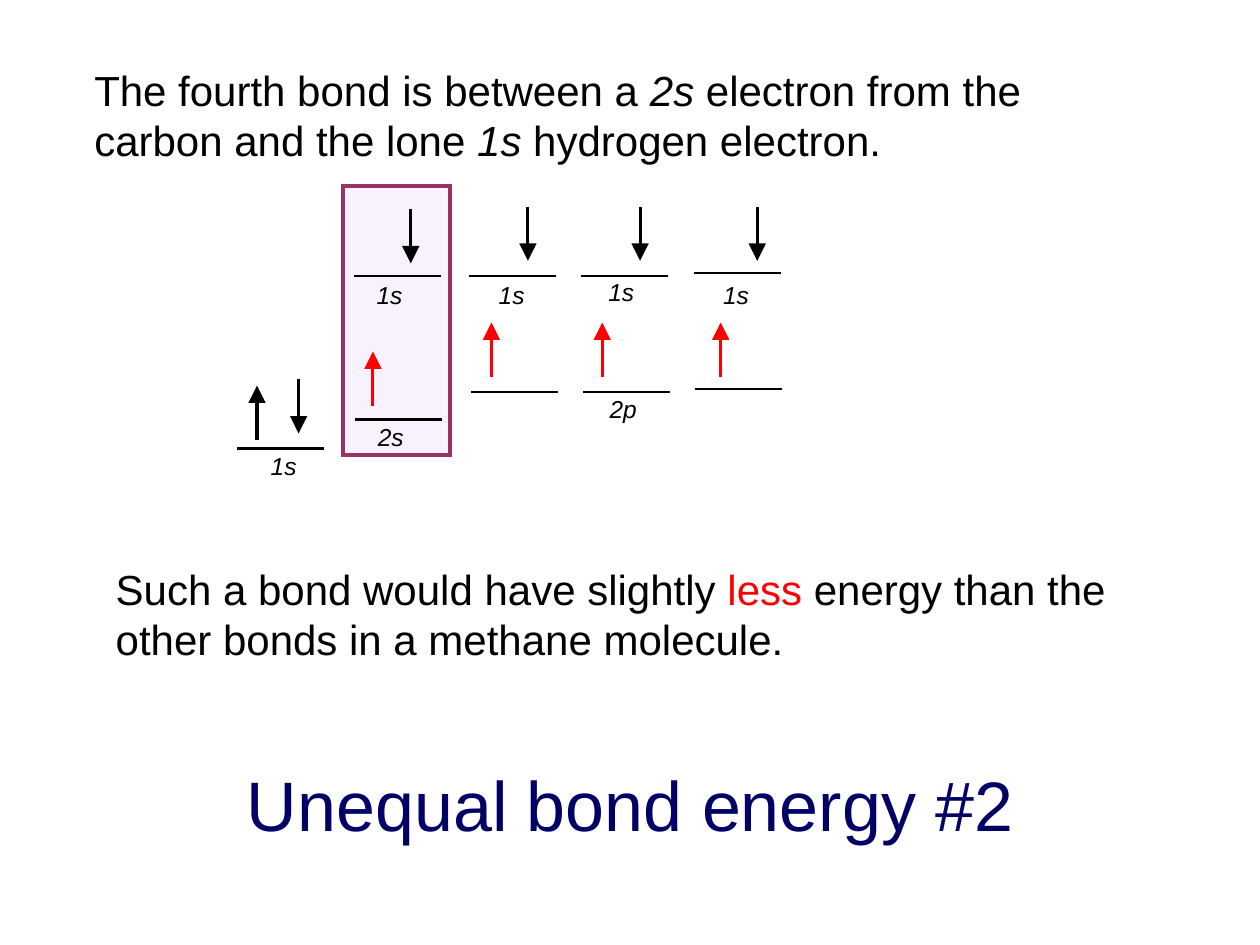
"""Build the slide on the unequal energy of the fourth bond in methane."""
from lxml import etree
from pptx import Presentation
from pptx.dml.color import RGBColor
from pptx.enum.shapes import MSO_CONNECTOR, MSO_SHAPE
from pptx.enum.text import MSO_ANCHOR, PP_ALIGN
from pptx.oxml.ns import qn
from pptx.util import Inches, Pt

STRAIGHT = MSO_CONNECTOR.STRAIGHT
RECTANGLE = MSO_SHAPE.RECTANGLE
MIDDLE = MSO_ANCHOR.MIDDLE
CENTER = PP_ALIGN.CENTER
BLACK, RED, NAVY, PLUM, LILAC = "000000", "FF0000", "000066", "993366", "CC99FF"

deck = Presentation()
deck.slide_width, deck.slide_height = Inches(10), Inches(7.5)
column, row = deck.slide_width / 100, deck.slide_height / 75
slide = deck.slides.add_slide(deck.slide_layouts[5])


def write(frame, *lines, size=24, color=BLACK, italic=False, wrap=False, align=None):
    """Fill a frame with lines of (text, format) runs."""
    frame.word_wrap = wrap
    for index, runs in enumerate(lines):
        paragraph = frame.add_paragraph() if index else frame.paragraphs[0]
        paragraph.alignment = align
        for text, style in runs:
            run = paragraph.add_run()
            run.text = text
            run.font.name, run.font.size = "Arial", Pt(size)
            run.font.italic = style.get("italic", italic)
            run.font.color.rgb = RGBColor.from_string(style.get("color", color))


def stroke(parent, x1, y1, x2, y2, color=BLACK, width=1.25, arrow=False):
    """Draw a straight line on the grid, with an arrowhead at its end if asked."""
    line = parent.add_connector(STRAIGHT, int(x1 * column), int(y1 * row), int(x2 * column), int(y2 * row))
    line.line.color.rgb = RGBColor.from_string(color)
    line.line.width = Pt(width)
    if arrow:
        etree.SubElement(line.line._get_or_add_ln(), qn("a:tailEnd"), type="triangle", w="lg", len="lg")
    etree.SubElement(line._element.spPr, qn("a:effectLst"))


italic = {"italic": True}
statements = [
    (6.5, 4.6, 75.6, False, [
        [("The fourth bond is between a ", {}), ("2s", italic), (" electron from the", {})],
        [("carbon and the lone ", {}), ("1s", italic), (" hydrogen electron.", {})],
    ]),
    (8.2, 44.2, 81.8, True, [
        [("Such a bond would have slightly ", {}), ("less", {"color": RED}),
         (" energy than the other bonds in a methane molecule.", {})],
    ]),
]
for x, y, width, wrap, lines in statements:
    statement = slide.shapes.add_textbox(int(x * column), int(y * row), int(width * column), int(9 * row))
    write(statement.text_frame, *lines, wrap=wrap)

title = slide.shapes.title
title.left, title.top = int(7.5 * column), int(57.5 * row)
title.width, title.height = int(85 * column), int(12.5 * row)
title.text_frame.vertical_anchor = MIDDLE
write(title.text_frame, [("Unequal bond energy #2", {})], size=40, color=NAVY, wrap=True, align=CENTER)

fourth_bond = slide.shapes.add_shape(
    RECTANGLE, int(27.2 * column), int(14.8 * row), int(8.5 * column), int(21.3 * row))
fourth_bond.shadow.inherit = False
fourth_bond.fill.solid()
fourth_bond.fill.fore_color.rgb = RGBColor.from_string(LILAC)
tint = fourth_bond.fill._xPr.find(qn("a:solidFill"))[0]
etree.SubElement(tint, qn("a:alpha"), val="12000")
fourth_bond.line.color.rgb = RGBColor.from_string(PLUM)
fourth_bond.line.width = Pt(2.25)
etree.SubElement(fourth_bond.line._get_or_add_ln(), qn("a:miter"), lim="800000")

level_width, arrow_length, label_width = 6.9, 4.3, 4.4
carbon = {
    "levels": [(18.8, 35.6), (28.2, 33.3), (37.4, 31.1), (46.3, 31.1), (55.2, 30.9)],
    "up": [(20.4, 30.6, BLACK), (29.6, 27.9, RED), (39, 25.6, RED), (47.8, 25.6, RED), (57.2, 25.6, RED)],
    "down": [(23.7, 30.1)],
    "labels": [("1s", 20.5, 35.3), ("2s", 29, 33), ("2p", 47.4, 30.8)],
}
hydrogen = {
    "levels": [(28.1, 21.9), (37.2, 21.9), (46.1, 21.9), (55.1, 21.7)],
    "up": [],
    "down": [(32.6, 16.6), (41.9, 16.4), (50.8, 16.4), (60.1, 16.4)],
    "labels": [("1s", 28.9, 21.7), ("1s", 38.6, 21.7), ("1s", 47.3, 21.5), ("1s", 56.4, 21.7)],
}
for atom in (carbon, hydrogen):
    diagram = slide.shapes.add_group_shape().shapes
    for x, y in atom["levels"]:
        stroke(diagram, x, y, x + level_width, y)
    for x, top, color in atom["up"]:
        stroke(diagram, x, top + arrow_length, x, top, color, 1.75, True)
    for x, top in atom["down"]:
        stroke(diagram, x, top, x, top + arrow_length, width=1.75, arrow=True)
    for orbital, x, y in atom["labels"]:
        label = diagram.add_textbox(int(x * column), int(y * row), int(label_width * column), int(3.3 * row))
        write(label.text_frame, [(orbital, {})], size=14, italic=True)

deck.save("out.pptx")
